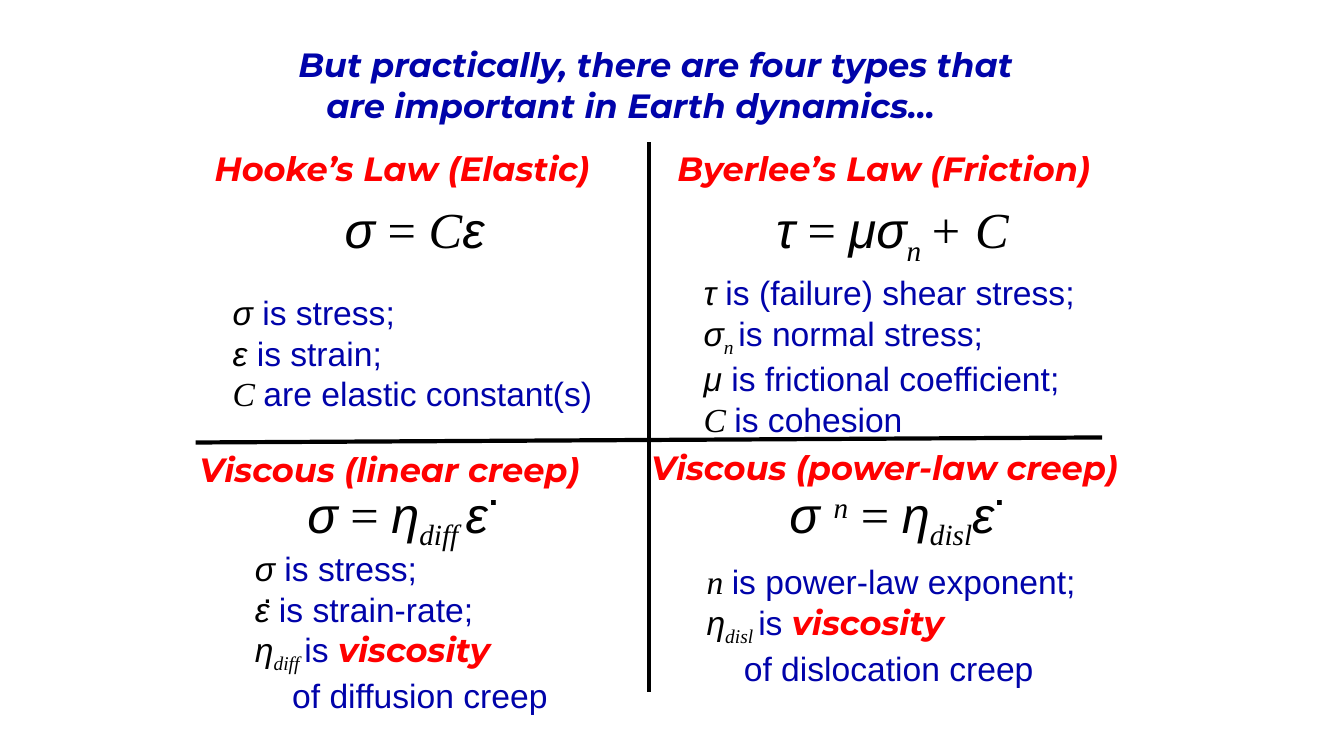
import pptx
import pptx.dml.color
import pptx.enum.shapes
import pptx.enum.text
import pptx.oxml
import pptx.oxml.ns
import pptx.util

PX = 9144
PAGE_WIDTH, PAGE_HEIGHT = 1333, 750
BODY_SIZE, EQUATION_SIZE = 24, 36
HEADING_HEIGHT, EQUATION_HEIGHT = 50, 71
DOT_WIDTH, DOT_HEIGHT = 29, 50
TITLE_INDENT, DEFINITION_INDENT = 28, 37

COLORS = {"navy": "0003AA", "red": "FF0000", "black": "000000"}

# style: font, colour, bold, italic, baseline
STYLES = {
    "title": ("Montserrat", "navy", True, True, 0),
    "strong": ("Montserrat", "red", True, True, 0),
    "words": ("Arial", "navy", False, False, 0),
    "greek": ("Arial", "black", False, True, 0),
    "latin": ("Times New Roman", "black", False, True, 0),
    "operator": ("Times New Roman", "black", False, False, 0),
    "below": ("Times New Roman", "black", False, True, -25000),
    "above": ("Times New Roman", "black", False, True, 30000),
    "dot": ("Arial", "black", False, False, 0),
    "bold dot": ("Arial", "black", True, False, 0),
}

QUADRANTS = [
    {
        "box": (194, 141),
        "heading": ((9, 1, 418), "Hooke’s Law (Elastic)"),
        "equation": ((138, 51, 160), [
            ("greek", "σ"), ("operator", " = "), ("latin", "C"), ("greek", "ε")]),
        "definitions": ((27, 144, 383, 131), [
            [("greek", "σ "), ("words", "is stress;")],
            [("greek", "ε "), ("words", "is strain;")],
            [("latin", "C "), ("words", "are elastic constant(s)")]]),
        "dots": [],
    },
    {
        "box": (644, 141),
        "heading": ((18, 1, 456), "Byerlee’s Law (Friction)"),
        "equation": ((116, 51, 261), [
            ("greek", "τ"), ("operator", " = "), ("greek", "μσ"),
            ("below", "n "), ("latin", "+ C")]),
        "definitions": ((44, 124, 403, 172), [
            [("greek", "τ "), ("words", "is (failure) shear stress;")],
            [("greek", "σ"), ("below", "n "), ("words", "is normal stress;")],
            [("greek", "μ "), ("words", "is frictional coefficient;")],
            [("latin", "C "), ("words", "is cohesion")]]),
        "dots": [],
    },
    {
        "box": (194, 439),
        "heading": ((-6, 1, 425), "Viscous (linear creep)"),
        "equation": ((101, 35, 210), [
            ("greek", "σ"), ("operator", " = "), ("greek", "η"),
            ("below", "diff "), ("greek", "ε")]),
        "definitions": ((49, 100, 313, 172), [
            [("greek", "σ "), ("words", "is stress;")],
            [("greek", "ε "), ("words", "is strain-rate;")],
            [("greek", "η"), ("below", "diff "), ("words", "is "), ("strong", "viscosity")],
            [("words", "of diffusion creep")]]),
        "dots": [(281, 24, "bold dot"), (57, 121, "dot")],
    },
    {
        "box": (644, 439),
        "heading": ((-8, -1, 510), "Viscous (power-law creep)"),
        "equation": ((129, 35, 235), [
            ("greek", "σ "), ("above", "n"), ("operator", " = "), ("greek", "η"),
            ("below", "disl"), ("greek", "ε")]),
        "definitions": ((47, 113, 400, 131), [
            [("latin", "n "), ("words", "is power-law exponent;")],
            [("greek", "η"), ("below", "disl "), ("words", "is "), ("strong", "viscosity")],
            [("words", "of dislocation creep")]]),
        "dots": [(333, 24, "bold dot")],
    },
]


def style_font(font, style):
    name, color, bold, italic, _ = STYLES[style]
    font.name = name
    font.bold = bold
    font.italic = italic
    font.color.rgb = pptx.dml.color.RGBColor.from_string(COLORS[color])


def add_text(page, box, paragraphs, size=BODY_SIZE, last_indent=0):
    shape = page.shapes.add_textbox(*(length * PX for length in box))
    frame = shape.text_frame
    frame.word_wrap = False
    frame.auto_size = pptx.enum.text.MSO_AUTO_SIZE.SHAPE_TO_FIT_TEXT
    for index, parts in enumerate(paragraphs):
        para = frame.add_paragraph() if index else frame.paragraphs[0]
        para.font.size = pptx.util.Pt(size)
        for style, text in parts:
            span = para.add_run()
            span.text = text
            style_font(para.font if len(parts) == 1 else span.font, style)
            baseline = STYLES[style][-1]
            if baseline:
                span.font._element.set("baseline", str(baseline))
    if last_indent:
        para._p.get_or_add_pPr().set("marL", str(last_indent * PX))


def add_axis(page, start, end):
    line = page.shapes.add_connector(
        pptx.enum.shapes.MSO_CONNECTOR.STRAIGHT,
        *(length * PX for length in start + end))
    line.line.width = pptx.util.Pt(3)
    line.line.color.rgb = pptx.dml.color.RGBColor.from_string(COLORS["black"])
    properties = line._element.spPr
    properties.append(pptx.oxml.parse_xml(
        "<a:effectLst %s/>" % pptx.oxml.ns.nsdecls("a")))


def add_title(page, box):
    add_text(page, box, [
        [("title", "But practically, there are four types that")],
        [("title", "are important in Earth dynamics…")],
    ], last_indent=TITLE_INDENT)


def add_quadrant(page, quadrant):
    left, top = quadrant["box"]
    (x, y, width), heading = quadrant["heading"]
    add_text(page, (left + x, top + y, width, HEADING_HEIGHT), [[("strong", heading)]])
    (x, y, width), equation = quadrant["equation"]
    add_text(page, (left + x, top + y, width, EQUATION_HEIGHT), [equation], EQUATION_SIZE)
    (x, y, width, height), definitions = quadrant["definitions"]
    continued = len(definitions[-1]) == 1
    add_text(page, (left + x, top + y, width, height), definitions,
             last_indent=DEFINITION_INDENT if continued else 0)
    for x, y, style in quadrant["dots"]:
        add_text(page, (left + x, top + y, DOT_WIDTH, DOT_HEIGHT), [[(style, ".")]])


def main():
    deck = pptx.Presentation()
    deck.slide_width = PAGE_WIDTH * PX
    deck.slide_height = PAGE_HEIGHT * PX
    page = deck.slides.add_slide(deck.slide_layouts[6])
    add_title(page, (286, 39, 762, 91))
    add_axis(page, (644, 141), (644, 687))
    add_axis(page, (194, 439), (1093, 434))
    for quadrant in QUADRANTS:
        add_quadrant(page, quadrant)
    deck.save("out.pptx")


if __name__ == "__main__":
    main()
